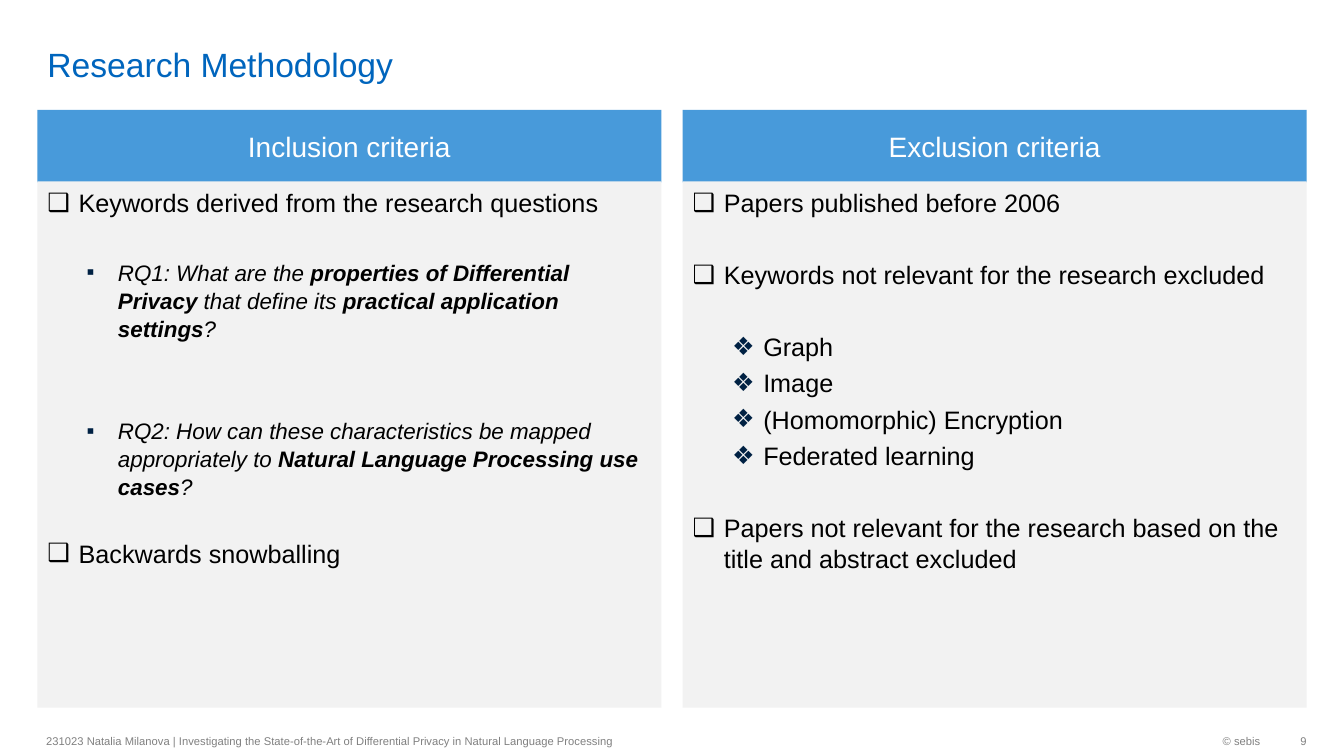
import dataclasses
import lxml.etree
import pptx
import pptx.dml.color
import pptx.enum.text
import pptx.oxml.ns
import pptx.util

Inches = pptx.util.Inches
Align = pptx.enum.text.PP_ALIGN
Anchor = pptx.enum.text.MSO_ANCHOR


@dataclasses.dataclass(frozen=True)
class Theme:
    font: str = "Arial"
    title: str = "0065BD"
    head: str = "489ADA"
    panel: str = "F2F2F2"
    ink: str = "000000"
    white: str = "FFFFFF"
    navy: str = "002143"
    grey: str = "808080"
    title_size: float = 24
    head_size: float = 20
    text_size: float = 18
    quote_size: float = 16
    foot_size: float = 8
    line: float = 1.04


THEME = Theme()


@dataclasses.dataclass(frozen=True)
class Item:
    words: tuple[str, ...]
    mark: str = "❑"
    gap: float = 3.6
    level: int = 0
    quote: bool = False


@dataclasses.dataclass(frozen=True)
class Column:
    left: float
    head: str
    items: tuple[Item, ...]


@dataclasses.dataclass(frozen=True)
class Note:
    text: str
    left: float
    width: float
    align: Align
    inset: float = 0.1


COLUMNS = (
    Column(0.37, "Inclusion criteria", (
        Item(("Keywords derived from the research questions",), gap=0),
        Item(("RQ1:\u00a0What are the ", "properties of Differential Privacy ",
              "that define its ", "practical application settings", "?"),
             "▪", 28.4, 1, True),
        Item(("RQ2: How can these characteristics be mapped appropriately to ",
              "Natural Language Processing use cases", "?"),
             "▪", 53.6, 1, True),
        Item(("Backwards snowballing",), gap=25.9),
    )),
    Column(6.77, "Exclusion criteria", (
        Item(("Papers published before 2006",), gap=0),
        Item(("Keywords not relevant for the research excluded",), gap=28.8),
        Item(("Graph",), "❖", 28.8, 1),
        Item(("Image",), "❖", level=1),
        Item(("(Homomorphic) Encryption",), "❖", level=1),
        Item(("Federated learning",), "❖", level=1),
        Item(("Papers not relevant for the research based on the title "
              "and abstract excluded",), gap=28.8),
    )),
)

NOTES = (
    Note("© sebis", 10.26, 2.34, Align.RIGHT),
    Note("231023 Natalia Milanova | Investigating the State-of-the-Art of "
         "Differential Privacy in Natural Language Processing",
         0.36, 6.3, Align.LEFT),
    Note("9", 12.6, 0.36, Align.RIGHT, 0),
)


def tint(code: str) -> pptx.dml.color.RGBColor:
    return pptx.dml.color.RGBColor.from_string(code)


def style(para, size: float, color: str, slant: bool = False) -> None:
    font = para.font
    font.name = THEME.font
    font.size = pptx.util.Pt(size)
    font.color.rgb = tint(color)
    font.bold = False
    font.italic = slant


def place(shape, left: float, top: float, width: float, height: float) -> None:
    shape.left, shape.top = Inches(left), Inches(top)
    shape.width, shape.height = Inches(width), Inches(height)


def label(shape, text: str, size: float, color: str, align: Align,
          anchor: Anchor = Anchor.MIDDLE) -> None:
    frame = shape.text_frame
    frame.word_wrap = True
    frame.auto_size = pptx.enum.text.MSO_AUTO_SIZE.NONE
    frame.vertical_anchor = anchor
    para = frame.paragraphs[0]
    para.text = text
    para.alignment = align
    para.space_before = pptx.util.Pt(0)
    style(para, size, color)


def bullet(para, item: Item) -> None:
    qn = pptx.oxml.ns.qn
    props = para._p.get_or_add_pPr()
    props.set("marL", str(Inches(0.7 if item.level else 0.31)))
    props.set("indent", str(Inches(-0.31)))
    color = lxml.etree.SubElement(props, qn("a:buClr"))
    code = THEME.navy if item.level else THEME.ink
    lxml.etree.SubElement(color, qn("a:srgbClr"), val=code)
    lxml.etree.SubElement(props, qn("a:buFont"), typeface=THEME.font)
    lxml.etree.SubElement(props, qn("a:buChar"), char=item.mark)


def fill_list(shape, items: tuple[Item, ...]) -> None:
    frame = shape.text_frame
    frame.word_wrap = True
    frame.auto_size = pptx.enum.text.MSO_AUTO_SIZE.NONE
    frame.vertical_anchor = Anchor.TOP
    for index, item in enumerate(items):
        para = frame.add_paragraph() if index else frame.paragraphs[0]
        para.level = item.level
        bullet(para, item)
        para.space_before = pptx.util.Pt(item.gap)
        para.line_spacing = THEME.line
        size = THEME.quote_size if item.quote else THEME.text_size
        style(para, size, THEME.ink, item.quote)
        for order, text in enumerate(item.words):
            run = para.add_run()
            run.text = text
            if order % 2:
                run.font.bold = True


def draw_column(head, body, column: Column) -> None:
    for shape, top, height, color in ((head, 1.09, 0.72, THEME.head),
                                      (body, 1.8, 5.22, THEME.panel)):
        place(shape, column.left, top, 6.19, height)
        shape.fill.solid()
        shape.fill.fore_color.rgb = tint(color)
    label(head, column.head, THEME.head_size, THEME.white, Align.CENTER)
    fill_list(body, column.items)


def draw_note(slide, note: Note) -> None:
    box = slide.shapes.add_textbox(
        Inches(note.left), Inches(7.19), Inches(note.width), Inches(0.32))
    box.text_frame.margin_right = Inches(note.inset)
    label(box, note.text, THEME.foot_size, THEME.grey, note.align)


def main() -> None:
    deck = pptx.Presentation()
    deck.slide_width, deck.slide_height = Inches(13.33), Inches(7.5)
    slide = deck.slides.add_slide(deck.slide_layouts.get_by_name("Comparison"))
    title, *panels = slide.placeholders
    place(title, 0.37, 0.05, 11.58, 0.79)
    title.text_frame.margin_top = title.text_frame.margin_bottom = 0
    label(title, "Research Methodology", THEME.title_size, THEME.title,
          Align.LEFT, Anchor.BOTTOM)
    for head, body, column in zip(panels[::2], panels[1::2], COLUMNS):
        draw_column(head, body, column)
    for note in NOTES:
        draw_note(slide, note)
    deck.save("out.pptx")


if __name__ == "__main__":
    main()
